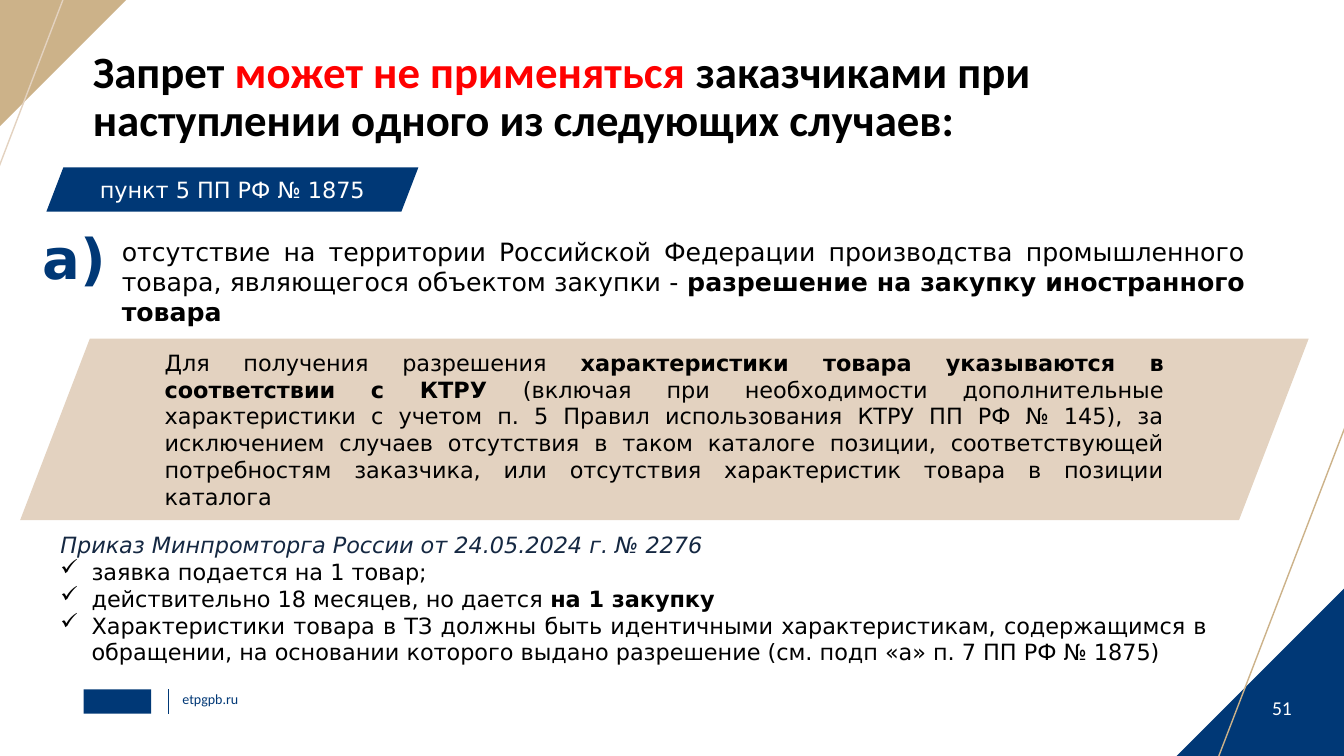
from lxml import etree
from pptx import Presentation
from pptx.dml.color import RGBColor
from pptx.enum import shapes, text
from pptx.oxml import ns
from pptx.util import Inches, Pt

NAVY, GOLD, SAND = "003876", "CCB289", "E3D2C0"
BLACK, WHITE, RED, INK = "000000", "FFFFFF", "FF0000", "152842"
BODY_FONT, HEAD_FONT = "DejaVu Sans", "Calibri"
ALIGN, ANCHOR = text.PP_ALIGN, text.MSO_ANCHOR
SKEW = 0.384
HANGING = 0.31


def colour(value):
    return RGBColor.from_string(value)


def inches(*lengths):
    return [Inches(length) for length in lengths]


def set_margins(frame, horizontal, vertical):
    frame.margin_left = frame.margin_right = Inches(horizontal)
    frame.margin_top = frame.margin_bottom = Inches(vertical)


def write_runs(paragraph, runs, **base):
    """Add (wording, changes) runs, each formatted by base plus its changes."""
    for wording, changes in runs:
        run = paragraph.add_run()
        run.text = wording
        style = {"name": BODY_FONT, "size": 16, "color": BLACK, "bold": False, **base, **changes}
        run.font.color.rgb = colour(style.pop("color"))
        style["size"] = Pt(style["size"])
        for name, value in style.items():
            setattr(run.font, name, value)


def add_text(slide, box, runs, align=ALIGN.LEFT, anchor=ANCHOR.TOP, margins=(0, 0), **base):
    frame = slide.shapes.add_textbox(*inches(*box)).text_frame
    frame.word_wrap = True
    frame.vertical_anchor = anchor
    set_margins(frame, *margins)
    frame.paragraphs[0].alignment = align
    write_runs(frame.paragraphs[0], runs, **base)
    return frame


def add_filled(slide, kind, box, fill, adjustment=None):
    shape = slide.shapes.add_shape(kind, *inches(*box))
    shape.shadow.inherit = False
    shape.fill.solid()
    shape.fill.fore_color.rgb = colour(fill)
    shape.line.fill.background()
    if adjustment is not None:
        shape.adjustments[0] = adjustment
    return shape


def add_line(slide, start, end, stroke, width):
    line = slide.shapes.add_connector(shapes.MSO_CONNECTOR.STRAIGHT, *inches(*start, *end))
    line.line.color.rgb = colour(stroke)
    line.line.width = Pt(width)
    etree.SubElement(line._element.spPr, ns.qn("a:effectLst"))


def add_banner(slide, box, fill, runs, align, **base):
    banner = add_filled(slide, shapes.MSO_SHAPE.PARALLELOGRAM, box, fill, SKEW)
    frame = banner.text_frame
    frame.word_wrap = True
    frame.vertical_anchor = ANCHOR.MIDDLE
    set_margins(frame, 0.08, 0.04)
    frame.paragraphs[0].alignment = align
    write_runs(frame.paragraphs[0], runs, **base)


def add_corners(slide):
    triangle = shapes.MSO_SHAPE.ISOSCELES_TRIANGLE
    add_filled(slide, triangle, (11.66, 5.83, 1.68, 1.68), NAVY, 1)
    add_line(slide, (13.37, 4.16), (12.05, 7.6), GOLD, 1)
    add_filled(slide, triangle, (0, 0, 1.25, 1.25), GOLD, 1).rotation = 180
    add_line(slide, (0.65, -0.07), (-0.05, 1.76), SAND, 1)
    add_text(slide, (12.31, 6.78, 0.81, 0.36), [("51", {})], ALIGN.CENTER, ANCHOR.BOTTOM,
             name=HEAD_FONT, size=14, color=WHITE)


def add_footer(slide, box):
    left, top, width, height = box
    add_filled(slide, shapes.MSO_SHAPE.RECTANGLE, (left, top, 0.67, height), NAVY)
    divider = left + 0.84
    add_line(slide, (divider, top), (divider, top + height), NAVY, 0.5)
    add_text(slide, (left + 0.98, top + 0.01, width - 0.98, 0.17), [("etpgpb.ru", {})],
             name=HEAD_FONT, size=10, color=NAVY)


def fill_title(slide, box):
    title = slide.shapes.title
    title.left, title.top, title.width, title.height = inches(*box)
    frame = title.text_frame
    frame.word_wrap = True
    frame.auto_size = text.MSO_AUTO_SIZE.NONE
    frame.vertical_anchor = ANCHOR.TOP
    set_margins(frame, 0, 0)
    paragraph = frame.paragraphs[0]
    paragraph.alignment = ALIGN.LEFT
    paragraph.line_spacing = 0.9
    write_runs(paragraph, [
        ("Запрет ", {}),
        ("может не применяться ", {"color": RED}),
        ("заказчиками при наступлении одного из следующих случаев:", {}),
    ], name=HEAD_FONT, size=32, bold=True)


def add_case(slide, box):
    """Place the case letter and, to the right of it, the wording of the case."""
    left, top, width, height = box
    letter = add_text(slide, (left, top, 0.92, 1.25), [("а)", {})], size=40, color=NAVY, bold=True)
    letter.paragraphs[0].line_spacing = 0.9
    add_text(slide, (left + 0.69, top, width - 0.69, height), [
        ("отсутствие на территории Российской Федерации производства промышленного товара, "
         "являющегося объектом закупки - ", {}),
        ("разрешение на закупку иностранного товара", {"bold": True}),
    ], ALIGN.JUSTIFY, margins=(0.1, 0.05), size=18)


def add_order(slide, box):
    frame = add_text(slide, box, [("Приказ Минпромторга России от 24.05.2024 г. № 2276", {})],
                     ALIGN.JUSTIFY, margins=(0.1, 0.05), color=INK, italic=True)
    conditions = [
        [("заявка подается на 1 товар;", {})],
        [("действительно 18 месяцев, но дается ", {}), ("на 1 закупку", {"bold": True})],
        [("Характеристики товара в ТЗ должны быть идентичными характеристикам, содержащимся "
          "в обращении, на основании которого выдано разрешение "
          "(см. подп «а» п. 7 ПП РФ № 1875)", {})],
    ]
    for runs in conditions:
        paragraph = frame.add_paragraph()
        paragraph.alignment = ALIGN.JUSTIFY
        properties = paragraph._p.get_or_add_pPr()
        properties.set("marL", str(Inches(HANGING)))
        properties.set("indent", str(-Inches(HANGING)))
        etree.SubElement(properties, ns.qn("a:buChar"), char="✓")
        write_runs(paragraph, runs)


def build_slide(presentation):
    slide = presentation.slides.add_slide(presentation.slide_layouts[5])
    add_corners(slide)
    add_footer(slide, (0.83, 6.84, 2.08, 0.24))
    fill_title(slide, (0.92, 0.49, 11.66, 0.97))
    add_banner(slide, (0.46, 1.66, 3.69, 0.44), NAVY, [("пункт 5 ПП РФ № 1875", {})],
               ALIGN.CENTER, color=WHITE)
    add_case(slide, (0.42, 2.29, 12.03, 1.01))
    add_banner(slide, (0.2, 3.36, 12.78, 1.8), SAND, [
        ("Для получения разрешения ", {}),
        ("характеристики товара указываются в соответствии с КТРУ ", {"bold": True}),
        ("(включая при необходимости дополнительные характеристики с учетом п. 5 Правил "
         "использования КТРУ ПП РФ № 145), за исключением случаев отсутствия в таком каталоге "
         "позиции, соответствующей потребностям заказчика, или отсутствия характеристик товара "
         "в позиции каталога", {}),
    ], ALIGN.JUSTIFY)
    add_order(slide, (0.5, 5.22, 11.58, 1.45))


def main():
    presentation = Presentation()
    presentation.slide_width, presentation.slide_height = inches(13.33, 7.5)
    build_slide(presentation)
    presentation.save("out.pptx")


if __name__ == "__main__":
    main()
